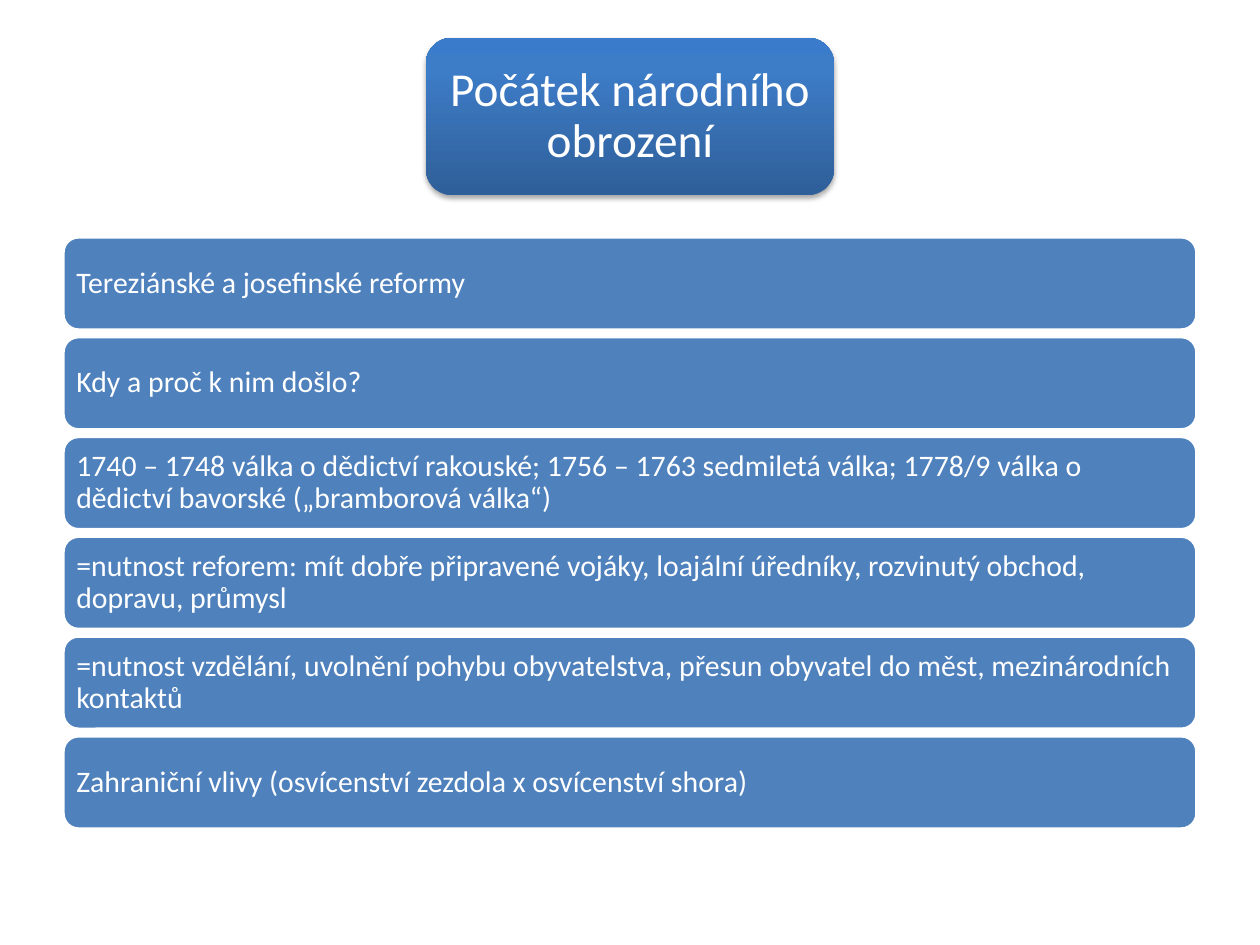
from copy import deepcopy
from dataclasses import dataclass

from lxml.etree import SubElement
from pptx import Presentation
from pptx.dml.color import RGBColor
from pptx.enum.shapes import MSO_SHAPE
from pptx.enum.text import MSO_ANCHOR, PP_ALIGN
from pptx.oxml.ns import qn
from pptx.util import Inches, Pt


@dataclass(frozen=True)
class Theme:
    """Colours, font and type sizes of the slide."""
    font: str = "Calibri"
    white: str = "FFFFFF"
    blue: str = "4F81BD"
    shade: str = "000000"
    ramp: tuple = ((0, "2F5F99"), (0.8, "3D7CC7"), (1, "3A7CCB"))
    head: int = 27
    body: int = 17


THEME = Theme()
TITLE = "Počátek národního obrození"
ROWS = (
    "Tereziánské a josefinské reformy",
    "Kdy a proč k nim došlo?",
    "1740 – 1748 válka o dědictví rakouské; 1756 – 1763 sedmiletá válka; "
    "1778/9 válka o dědictví bavorské („bramborová válka“)",
    "=nutnost reforem: mít dobře připravené vojáky, loajální úředníky, "
    "rozvinutý obchod, dopravu, průmysl",
    "=nutnost vzdělání, uvolnění pohybu obyvatelstva, přesun obyvatel do měst, "
    "mezinárodních kontaktů",
    "Zahraniční vlivy (osvícenství zezdola x osvícenství shora)",
)


def add_panel(slide, left, top, width, height):
    """Add a plain rounded panel without a shadow."""
    panel = slide.shapes.add_shape(
        MSO_SHAPE.ROUNDED_RECTANGLE,
        Inches(left), Inches(top), Inches(width), Inches(height))
    panel.shadow.inherit = False
    return panel


def put_text(shape, text, *, size, align=PP_ALIGN.LEFT, side=0.07, edge=0.07):
    """Write one formatted paragraph into a shape."""
    frame = shape.text_frame
    frame.word_wrap = True
    frame.vertical_anchor = MSO_ANCHOR.MIDDLE
    frame.margin_left = frame.margin_right = Inches(side)
    frame.margin_top = frame.margin_bottom = Inches(edge)
    para = frame.paragraphs[0]
    para.alignment = align
    para.line_spacing = 0.9
    run = para.add_run()
    run.text = text
    run.font.name = THEME.font
    run.font.size = Pt(size)
    run.font.color.rgb = RGBColor.from_string(THEME.white)


def fill_ramp(shape):
    """Fill a shape with the theme gradient, rising from its foot."""
    fill = shape.fill
    fill.gradient()
    fill.gradient_angle = 90
    stops = shape._element.spPr.find(".//" + qn("a:gsLst"))
    stops.append(deepcopy(stops[-1]))
    for stop, (place, color) in zip(fill.gradient_stops, THEME.ramp):
        stop.position = place
        stop.color.rgb = RGBColor.from_string(color)


def cast_shadow(shape):
    """Give a shape a soft shadow below it."""
    effects = shape._element.spPr.find(qn("a:effectLst"))
    shadow = SubElement(
        effects, qn("a:outerShdw"), blurRad=str(Pt(3.1)), dist=str(Pt(1.8)),
        dir="5400000", rotWithShape="0")
    color = SubElement(shadow, qn("a:srgbClr"), val=THEME.shade)
    SubElement(color, qn("a:alpha"), val="35000")


def draw_title(slide, text, left, top, width, height):
    """Place the title panel in the given box."""
    panel = add_panel(slide, left, top, width, height)
    fill_ramp(panel)
    cast_shadow(panel)
    panel.line.fill.background()
    put_text(panel, text, size=THEME.head, align=PP_ALIGN.CENTER,
             side=0.11, edge=0.06)


def draw_rows(slide, rows, left, top, width, height, tall=0.74):
    """Spread the row panels evenly down the given box."""
    pitch = (height - tall) / (len(rows) - 1)
    for index, text in enumerate(rows):
        panel = add_panel(slide, left, top + index * pitch, width, tall)
        panel.fill.solid()
        panel.fill.fore_color.rgb = RGBColor.from_string(THEME.blue)
        panel.line.color.rgb = RGBColor.from_string(THEME.white)
        panel.line.width = Pt(2)
        put_text(panel, text, size=THEME.body)


def main():
    """Build and save the slide."""
    deck = Presentation()
    deck.slide_width = Inches(10)
    deck.slide_height = Inches(7.5)
    slide = deck.slides.add_slide(deck.slide_layouts[6])
    draw_title(slide, TITLE, 3.38, 0.3, 3.24, 1.25)
    draw_rows(slide, ROWS, 0.5, 1.88, 9, 4.7)
    deck.save("out.pptx")


if __name__ == "__main__":
    main()
